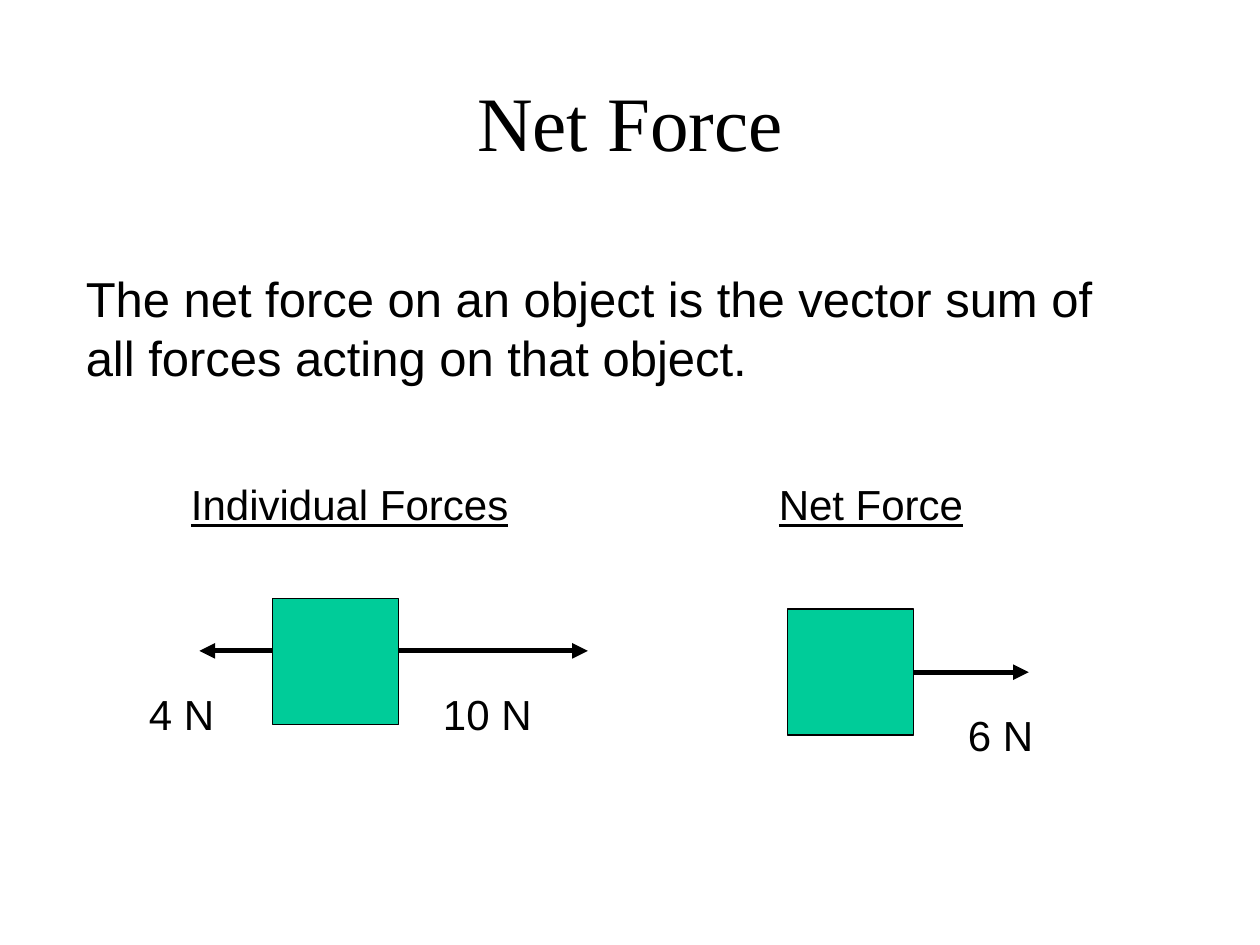
from lxml import etree
from pptx import Presentation
from pptx import util as u
from pptx.dml.color import RGBColor
from pptx.enum import shapes, text
from pptx.oxml.ns import qn

BLACK = RGBColor(0x00, 0x00, 0x00)
GREEN = RGBColor(0x00, 0xCC, 0x99)

BODY = {"name": "Arial", "size": u.Pt(28)}
LABEL = {"name": "Arial", "size": u.Pt(24)}
HEADING = {**LABEL, "underline": True}
TITLE = {"name": "Times New Roman", "size": u.Pt(44)}

SIDE = 2.54

prs = Presentation()
prs.slide_width, prs.slide_height = u.Cm(25.4), u.Cm(19.05)
s = prs.slides.add_slide(prs.slide_layouts[6])


def add_text(words, box, fmt, wrap=False):
    tf = s.shapes.add_textbox(*[u.Cm(v) for v in box]).text_frame
    tf.word_wrap = wrap
    p = tf.paragraphs[0]
    r = p.add_run()
    r.text = words
    for key, value in fmt.items():
        setattr(r.font, key, value)
    r.font.color.rgb = BLACK
    return tf


def add_arrow(x1, x2, y):
    c = s.shapes.add_connector(
        shapes.MSO_CONNECTOR.STRAIGHT, u.Cm(x1), u.Cm(y), u.Cm(x2), u.Cm(y))
    c.line.width = u.Pt(3)
    c.line.color.rgb = BLACK
    etree.SubElement(c.line._get_or_add_ln(), qn("a:tailEnd"), type="triangle")
    etree.SubElement(c._element.spPr, qn("a:effectLst"))
    return c


tf = add_text("Net Force", (1.91, 0.85, 21.59, 3.18), TITLE, wrap=True)
tf.vertical_anchor = text.MSO_ANCHOR.MIDDLE
tf.paragraphs[0].alignment = text.PP_ALIGN.CENTER

add_text("The net force on an object is the vector sum of all forces acting on that object.",
         (1.48, 5.29, 22.01, 2.62), BODY, wrap=True)

for words, x, y, w, fmt in [
    ("Individual Forces", 3.6, 9.53, 6.91, HEADING),
    ("Net Force", 15.45, 9.53, 4.22, HEADING),
    ("4 N", 2.75, 13.76, 1.83, LABEL),
    ("10 N", 8.68, 13.76, 2.31, LABEL),
    ("6 N", 19.26, 14.18, 1.83, LABEL),
]:
    add_text(words, (x, y, w, 1.27), fmt)

for x, y in [(5.5, 12.07), (15.88, 12.28)]:
    sp = s.shapes.add_shape(
        shapes.MSO_SHAPE.RECTANGLE, u.Cm(x), u.Cm(y), u.Cm(SIDE), u.Cm(SIDE))
    sp.shadow.inherit = False
    sp.fill.solid()
    sp.fill.fore_color.rgb = GREEN
    sp.line.color.rgb = BLACK
    sp.line.width = u.Pt(0.75)

add_arrow(5.5, 4.02, 13.12)
add_arrow(5.5 + SIDE, 11.85, 13.12)
add_arrow(15.88 + SIDE, 20.74, 12.28 + SIDE / 2).begin_connect(sp, 3)

prs.save("out.pptx")
